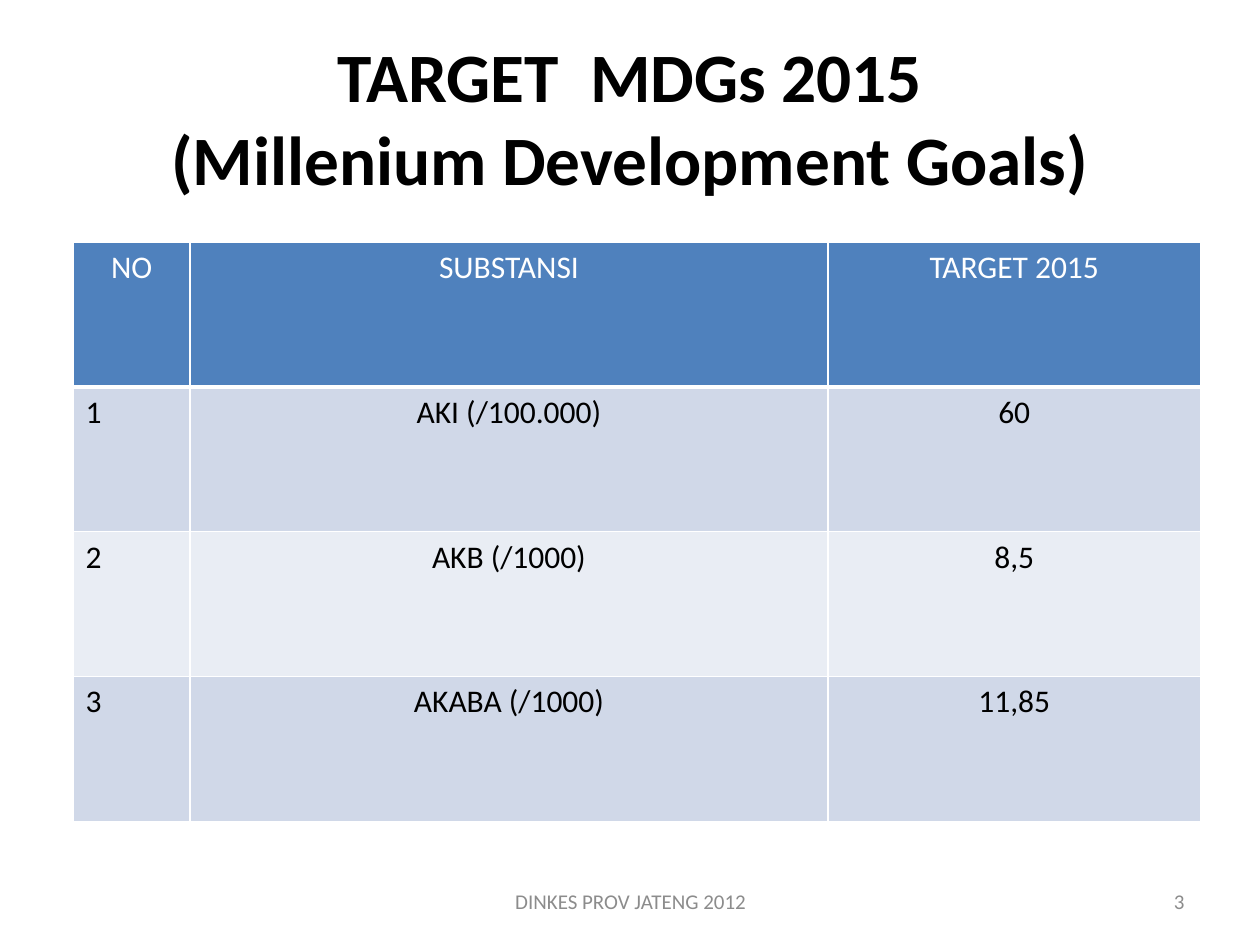
"""Build the slide of development goal targets for 2015."""
from lxml import etree
from pptx import Presentation
from pptx import util as u
from pptx.dml.color import RGBColor
from pptx.enum import text
from pptx.oxml import ns

WIDE, HIGH = 10, 7.5
FONT = "Calibri"
BLACK = RGBColor(0x00, 0x00, 0x00)
WHITE = RGBColor(0xFF, 0xFF, 0xFF)
GREY = RGBColor(0x8C, 0x8C, 0x8C)
BLUE = RGBColor(0x4F, 0x81, 0xBD)
BANDS = RGBColor(0xD0, 0xD8, 0xE8), RGBColor(0xE9, 0xED, 0xF4)
LEFT, MID, RIGHT = text.PP_ALIGN.LEFT, text.PP_ALIGN.CENTER, text.PP_ALIGN.RIGHT

COLS = 0.93, 5.06, 2.96
ROW = 1.15
GOALS = [
    ("NO", "SUBSTANSI", "TARGET 2015"),
    ("1", "AKI (/100.000)", "60"),
    ("2", "AKB (/1000)", "8,5"),
    ("3", "AKABA (/1000)", "11,85"),
]


def write(frame, lines, size, color, align, bold=False):
    """Write lines into one paragraph, a run for each line."""
    para = frame.paragraphs[0]
    para.alignment = align
    for i, line in enumerate(lines):
        if i:
            para.add_line_break()
        run = para.add_run()
        run.text = line
        font = run.font
        font.name, font.size, font.bold = FONT, u.Pt(size), bold
        font.color.rgb = color


def label(slide, box, lines, size, color, align, bold=False):
    """Add a wrapped text box, centred in height."""
    frame = slide.shapes.add_textbox(*map(u.Inches, box)).text_frame
    frame.word_wrap = True
    frame.vertical_anchor = text.MSO_ANCHOR.MIDDLE
    write(frame, lines, size, color, align, bold)


def edge(cell, side, width):
    """Draw one white border of a cell."""
    props = cell._tc.get_or_add_tcPr()
    line = etree.SubElement(props, ns.qn(f"a:ln{side}"), w=str(u.Pt(width)))
    fill = etree.SubElement(line, ns.qn("a:solidFill"))
    etree.SubElement(fill, ns.qn("a:srgbClr"), val=str(WHITE))


def paint(cell, row, col):
    """Fill, border and write the cell at a row and column."""
    head = row == 0
    for side in "LRTB":
        edge(cell, side, 3 if head and side == "B" else 1)
    cell.fill.solid()
    cell.fill.fore_color.rgb = BLUE if head else BANDS[(row - 1) % 2]
    align = MID if head or col else LEFT
    write(cell.text_frame, [GOALS[row][col]], 18, WHITE if head else BLACK, align)


def grid(slide, left, top):
    """Add the table of goals."""
    size = left, top, sum(COLS), ROW * len(GOALS)
    table = slide.shapes.add_table(len(GOALS), len(COLS), *map(u.Inches, size)).table
    for col, wide in enumerate(COLS):
        table.columns[col].width = u.Inches(wide)
    for row in range(len(GOALS)):
        table.rows[row].height = u.Inches(ROW)
        for col in range(len(COLS)):
            paint(table.cell(row, col), row, col)


def main():
    """Build and save the slide."""
    deck = Presentation()
    deck.slide_width, deck.slide_height = u.Inches(WIDE), u.Inches(HIGH)
    slide = deck.slides.add_slide(deck.slide_layouts[6])
    edge_x, foot = WIDE * 0.05, 6.95
    label(slide, (edge_x, HIGH * 0.04, WIDE * 0.9, HIGH / 6),
          ["TARGET  MDGs 2015", "(Millenium Development Goals)"],
          39.6, BLACK, MID, True)
    label(slide, (3.42, foot, 3.17, 0.4), ["DINKES PROV JATENG 2012"], 12, GREY, MID)
    label(slide, (7.17, foot, 2.33, 0.4), ["3"], 12, GREY, RIGHT)
    grid(slide, 0.58, 1.92)
    deck.save("out.pptx")


if __name__ == "__main__":
    main()
